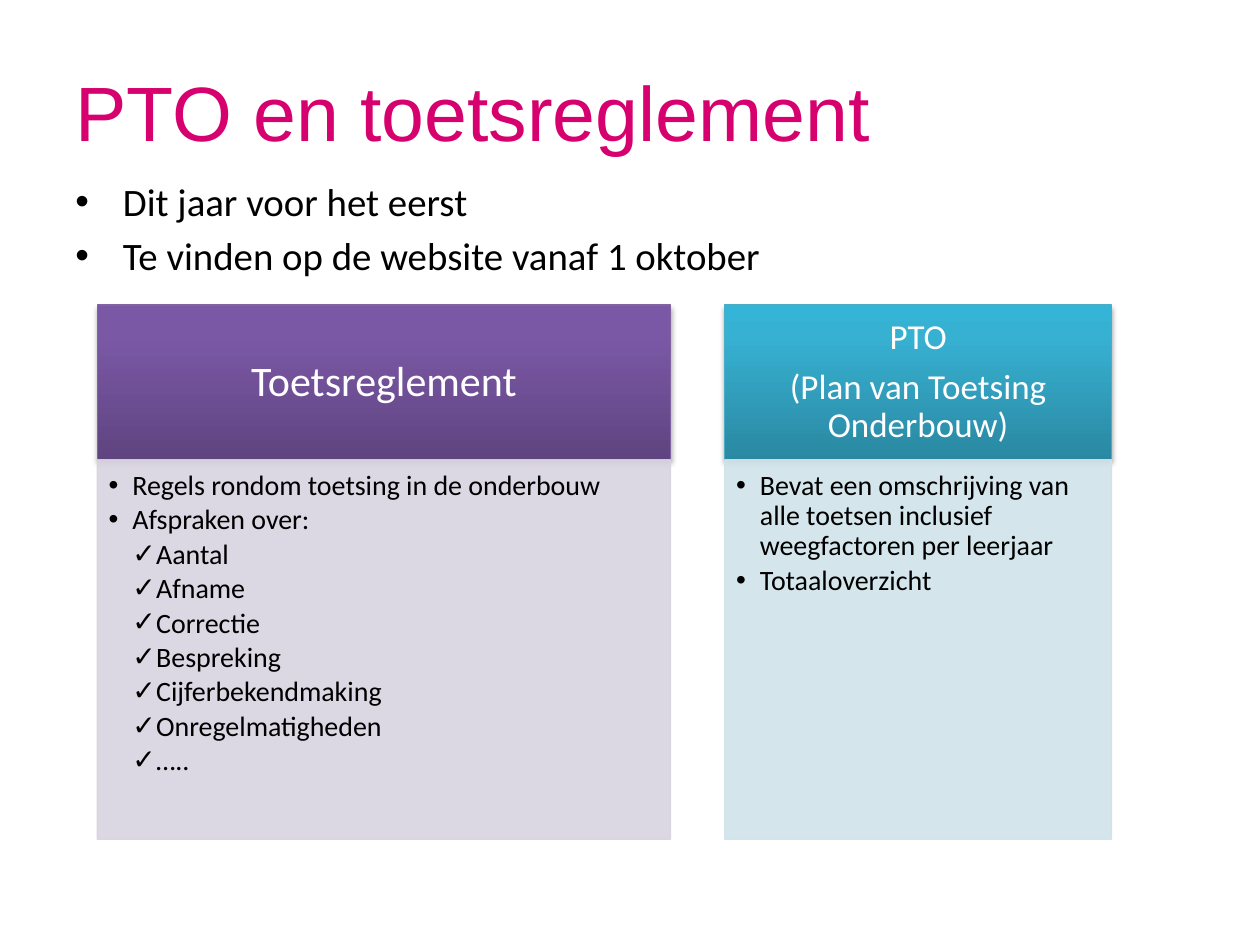
from dataclasses import dataclass

from lxml import etree
from pptx import Presentation
from pptx.dml.color import RGBColor
from pptx.enum.shapes import MSO_SHAPE
from pptx.enum.text import MSO_ANCHOR, PP_ALIGN
from pptx.oxml import parse_xml
from pptx.oxml.ns import nsdecls, qn
from pptx.util import Cm, Pt

RECTANGLE = MSO_SHAPE.RECTANGLE
TOP, MIDDLE = MSO_ANCHOR.TOP, MSO_ANCHOR.MIDDLE
LEFT, CENTER = PP_ALIGN.LEFT, PP_ALIGN.CENTER

COLORS = {
    "title": "D6006E", "text": "000000", "header_text": "FFFFFF", "shadow": "000000",
    "purple_line": "8064A2", "purple_tint": "D8D3E0",
    "purple_dark": "5F4480", "purple_mid": "7B58A6", "purple_light": "7C57A8",
    "teal_line": "4BACC6", "teal_tint": "D0E3EA",
    "teal_dark": "2A88A2", "teal_mid": "37B1D2", "teal_light": "34B4D6",
}
INDENT = 0.48
HEADER_TOP, HEADER_HEIGHT, DETAIL_HEIGHT = 6.15, 3.12, 7.65
DETAIL_INSETS = (0.23, 0.23, 0.3, 0.36)


@dataclass
class Item:
    text: str
    bullet: str = ""
    level: int = 0


@dataclass
class Panel:
    left: float
    width: float
    hue: str
    header: list[Item]
    header_size: float
    header_insets: tuple[float, float]
    details: list[Item]


INTRO = [Item("Dit jaar voor het eerst", "•", 2),
         Item("Te vinden op de website vanaf 1 oktober", "•", 2)]
RULE_TOPICS = ["Aantal", "Afname", "Correctie", "Bespreking", "Cijferbekendmaking",
               "Onregelmatigheden", "….."]
PANELS = [
    Panel(1.96, 11.56, "purple", [Item("Toetsreglement")], 24, (0.48, 0.28),
          [Item("Regels rondom toetsing in de onderbouw", "•", 1),
           Item("Afspraken over:", "•", 1)]
          + [Item(topic, "✓", 2) for topic in RULE_TOPICS]),
    Panel(14.61, 7.8, "teal",
          [Item("PTO"), Item("(Plan van Toetsing Onderbouw)")], 20, (0.41, 0.23),
          [Item("Bevat een omschrijving van alle toetsen inclusief weegfactoren per leerjaar",
                "•", 1),
           Item("Totaaloverzicht", "•", 1)]),
]


def write_text(frame, items: list[Item], *, size: float, color: str = "text",
               font: str = "Calibri", align=LEFT, anchor=TOP, line_spacing: float = 0.9,
               before: float = 0, after: float = 0, hanging: float = INDENT,
               insets: tuple = (0.25, 0.13, 0.25, 0.13)) -> None:
    """Fill a text frame; before and after are shares of the text size."""
    frame.word_wrap = True
    frame.vertical_anchor = anchor
    (frame.margin_left, frame.margin_top,
     frame.margin_right, frame.margin_bottom) = map(Cm, insets)
    for index, item in enumerate(items):
        paragraph = frame.add_paragraph() if index else frame.paragraphs[0]
        if item.bullet:
            properties = paragraph._p.get_or_add_pPr()
            properties.set("marL", str(Cm(INDENT * item.level)))
            properties.set("indent", str(-Cm(hanging)))
            etree.SubElement(properties, qn("a:buFont"), typeface="Arial")
            etree.SubElement(properties, qn("a:buChar"), char=item.bullet)
        paragraph.alignment = align
        paragraph.line_spacing = line_spacing
        paragraph.space_before = Pt(before * size if index else 0)
        paragraph.space_after = Pt(after * size)
        run = paragraph.add_run()
        run.text = item.text
        run.font.name, run.font.size = font, Pt(size)
        run.font.color.rgb = RGBColor.from_string(COLORS[color])


def add_text(slide, items: list[Item], box: tuple, **text_format) -> None:
    write_text(slide.shapes.add_textbox(*map(Cm, box)).text_frame, items, **text_format)


def add_block(slide, box: tuple, fill: str, line: str):
    block = slide.shapes.add_shape(RECTANGLE, *map(Cm, box))
    block.shadow.inherit = False
    block.fill.solid()
    block.fill.fore_color.rgb = RGBColor.from_string(COLORS[fill])
    block.line.color.rgb = RGBColor.from_string(COLORS[line])
    block.line.width = Pt(0.75)
    return block


def add_gradient(block, hue: str) -> None:
    stops = "".join(
        f'<a:gs pos="{position}"><a:srgbClr val="{COLORS[f"{hue}_{shade}"]}"/></a:gs>'
        for position, shade in ((0, "dark"), (80000, "mid"), (100000, "light")))
    gradient = parse_xml(f'<a:gradFill {nsdecls("a")} rotWithShape="1"><a:gsLst>{stops}'
                         '</a:gsLst><a:lin ang="16200000" scaled="0"/></a:gradFill>')
    properties = block._element.spPr
    properties.replace(properties.find(qn("a:solidFill")), gradient)


def add_shadow(block) -> None:
    effects = block._element.spPr.find(qn("a:effectLst"))
    effects.append(parse_xml(
        f'<a:outerShdw {nsdecls("a")} blurRad="{Pt(3.1)}" dist="{Pt(1.8)}" dir="5400000" '
        f'rotWithShape="0"><a:srgbClr val="{COLORS["shadow"]}"><a:alpha val="35000"/>'
        '</a:srgbClr></a:outerShdw>'))


def set_opacity(block, percent: int) -> None:
    for color in block._element.spPr.iter(qn("a:srgbClr")):
        etree.SubElement(color, qn("a:alpha"), val=str(percent * 1000))


def add_panel(slide, panel: Panel) -> None:
    # Header with gradient and shadow
    header = add_block(slide, (panel.left, HEADER_TOP, panel.width, HEADER_HEIGHT),
                       f"{panel.hue}_mid", f"{panel.hue}_line")
    add_gradient(header, panel.hue)
    add_shadow(header)
    write_text(header.text_frame, panel.header, size=panel.header_size,
               color="header_text", align=CENTER, anchor=MIDDLE, after=0.35,
               insets=panel.header_insets * 2)

    # Tinted details below it
    tint = f"{panel.hue}_tint"
    details = add_block(slide, (panel.left, HEADER_TOP + HEADER_HEIGHT, panel.width,
                                DETAIL_HEIGHT), tint, tint)
    set_opacity(details, 90)
    write_text(details.text_frame, panel.details, size=16, after=0.15,
               insets=DETAIL_INSETS)


def main() -> None:
    presentation = Presentation()
    presentation.slide_width, presentation.slide_height = Cm(25.4), Cm(19.05)
    slide = presentation.slides.add_slide(presentation.slide_layouts[6])

    # Title and introduction
    add_text(slide, [Item("PTO en toetsreglement")], (1.27, 0.76, 22.23, 3.18),
             size=44, color="title", font="Arial", anchor=MIDDLE)
    add_text(slide, INTRO, (1.27, 3.45, 21.82, 2.16), size=22.2, line_spacing=1,
             before=0.2, hanging=2 * INDENT)

    # Two panels side by side
    for panel in PANELS:
        add_panel(slide, panel)
    presentation.save("out.pptx")


if __name__ == "__main__":
    main()
